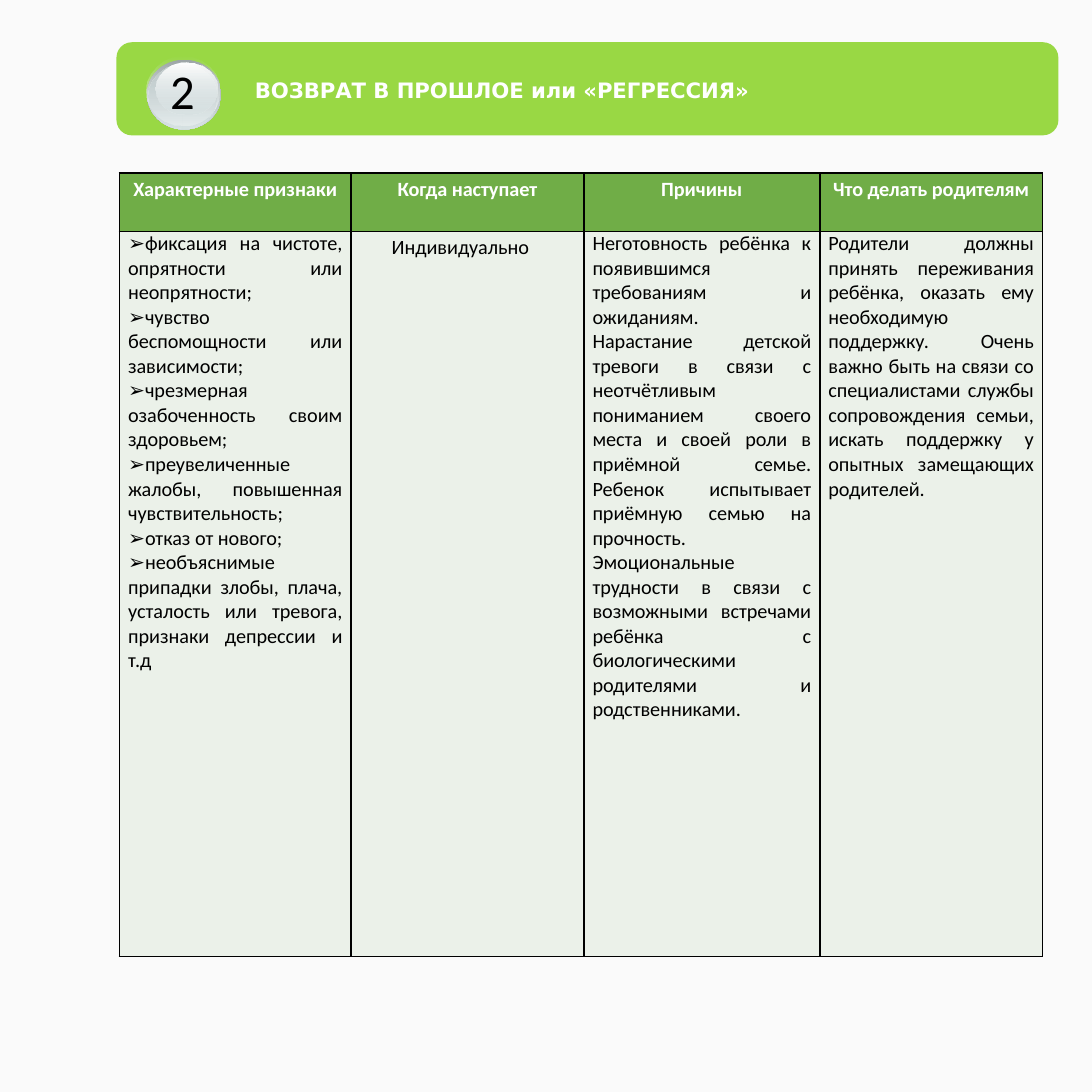
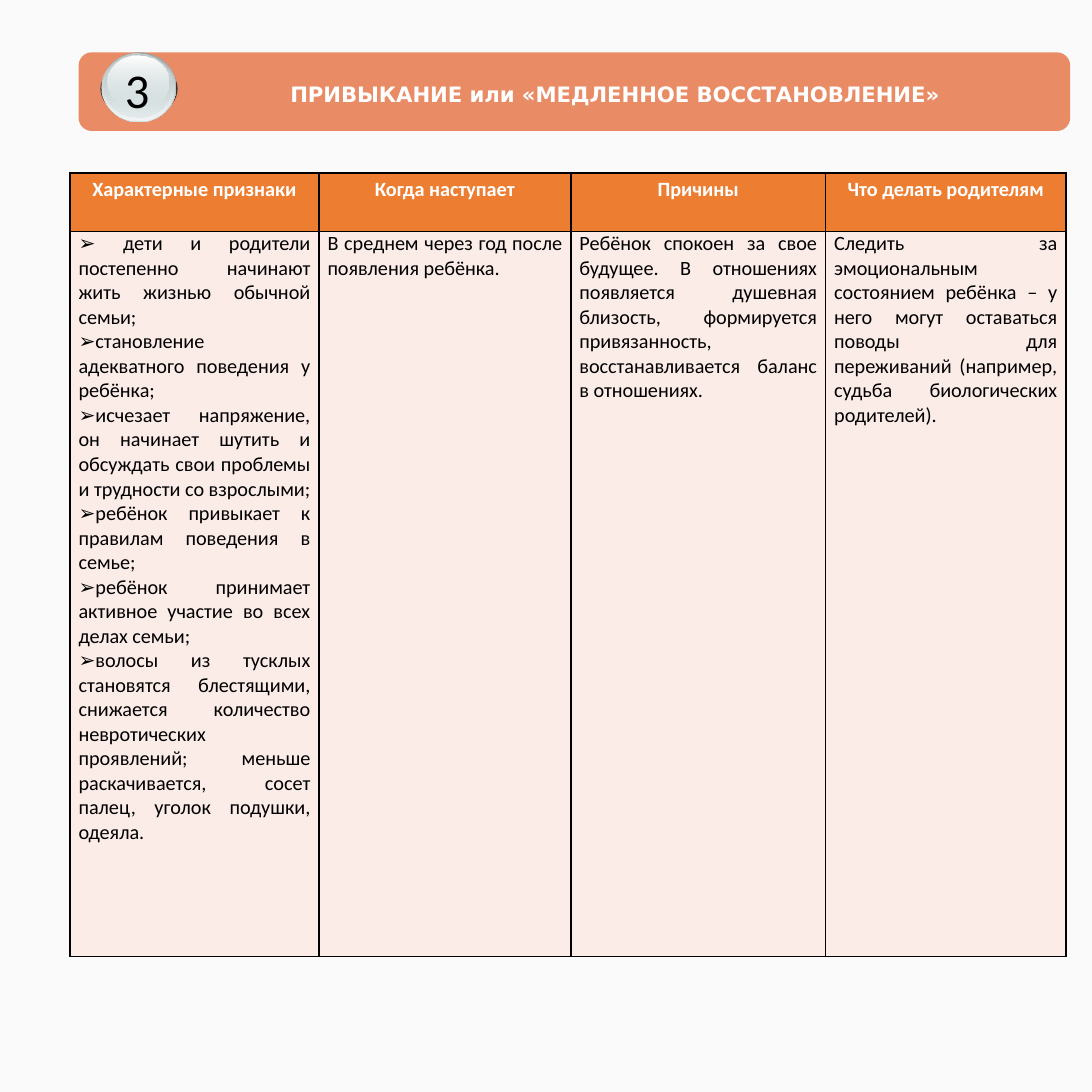
import pptx
import pptx.util
import pptx.dml.color
import pptx.enum.shapes
import pptx.enum.text
from lxml import etree
from pptx.oxml.ns import qn

Inches, Pt = pptx.util.Inches, pptx.util.Pt
SHAPE = pptx.enum.shapes.MSO_SHAPE
ALIGN = pptx.enum.text.PP_ALIGN

# Shared style
HEX = {"back": "FAFAFA", "black": "000000", "white": "FFFFFF", "shade": "333333",
       "steel": "99A1A2", "mist": "D6E1E2", "pale": "F2F5F5", "ash": "C1CBCC",
       "lime": "99D844", "green": "70AD47", "mint": "EBF1E9",
       "coral": "E98B65", "orange": "ED7D31", "blush": "FCECE8"}
SANS, HEAVY = "Calibri", "DejaVu Sans"
HEADS = ["Характерные признаки", "Когда наступает", "Причины", "Что делать родителям"]
ROWS = [0.4, 4.98]
TOP = 1.19

# Layers of the ball: size, then (colour, opacity) at the top and at the bottom
BALL = {
    "shade": ((0.53, 0.4), ("shade", 100), ("shade", 100)),
    "rim": ((0.51, 0.48), ("steel", 100), ("mist", 100)),
    "glow": ((0.5, 0.47), ("mist", 0), ("pale", 100)),
    "core": ((0.47, 0.44), ("ash", 100), ("mist", 48)),
    "shine": ((0.42, 0.36), ("white", 100), ("mist", 38)),
}

# Content
PAGES = [
    {
        "num": "2", "title": "ВОЗВРАТ В ПРОШЛОЕ или «РЕГРЕССИЯ»",
        "align": ALIGN.LEFT, "tone": ("lime", "green", "mint"),
        "band": (0.8, 0.29, 6.47, 0.64), "head": (1.65, 0.48), "digit": (1.07, 0.37),
        "ball": {"rim": (1.01, 0.41), "glow": (1.01, 0.39),
                 "core": (1.02, 0.44), "shine": (1.07, 0.43)},
        "left": 0.82, "cols": [1.59, 1.6, 1.62, 1.53],
        "signs": [
            "фиксация на чистоте, опрятности или неопрятности;",
            "чувство беспомощности или зависимости;",
            "чрезмерная озабоченность своим здоровьем;",
            "преувеличенные жалобы, повышенная чувствительность;",
            "отказ от нового;",
            "необъяснимые припадки злобы, плача, усталость или тревога, "
            "признаки депрессии и т.д",
        ],
        "when": ["Индивидуально"], "form": {"indent": 0.22, "space": 1.15},
        "why": [
            "Неготовность ребёнка к появившимся требованиям и ожиданиям.",
            "Нарастание детской тревоги в связи с неотчётливым пониманием своего "
            "места и своей роли в приёмной семье. Ребенок испытывает приёмную "
            "семью на прочность.",
            "Эмоциональные трудности в связи с возможными встречами ребёнка с "
            "биологическими родителями и родственниками.",
        ],
        "help": [
            "Родители должны принять переживания ребёнка, оказать ему необходимую "
            "поддержку. Очень важно быть на связи со специалистами службы "
            "сопровождения семьи, искать поддержку у опытных замещающих родителей.",
        ],
    },
    {
        "num": "3", "title": "ПРИВЫКАНИЕ или «МЕДЛЕННОЕ ВОССТАНОВЛЕНИЕ»",
        "align": ALIGN.CENTER, "tone": ("coral", "orange", "blush"),
        "band": (0.54, 0.36, 6.81, 0.54), "head": (1.57, 0.51), "digit": (0.76, 0.36),
        "ball": {"shade": (0.69, 0.41), "rim": (0.7, 0.36), "glow": (0.7, 0.36),
                 "core": (0.71, 0.37), "shine": (0.74, 0.38)},
        "left": 0.48, "cols": [1.71, 1.73, 1.75, 1.65],
        "signs": [
            " дети и родители постепенно начинают жить жизнью обычной семьи;",
            "становление адекватного поведения у ребёнка;",
            "исчезает напряжение, он начинает шутить и обсуждать свои проблемы и "
            "трудности со взрослыми;",
            "ребёнок привыкает к правилам поведения в семье;",
            "ребёнок принимает активное участие во всех делах семьи;",
            "волосы из тусклых становятся блестящими, снижается количество "
            "невротических проявлений; меньше раскачивается, сосет палец, уголок "
            "подушки, одеяла.",
        ],
        "when": ["В среднем через год после появления ребёнка."], "form": {},
        "why": [
            "Ребёнок спокоен за свое будущее. В отношениях появляется душевная "
            "близость, формируется привязанность, восстанавливается баланс в "
            "отношениях.",
        ],
        "help": [
            "Следить за эмоциональным состоянием ребёнка – у него могут оставаться "
            "поводы для переживаний (например, судьба биологических родителей).",
        ],
    },
]


def rgb(name):
    return pptx.dml.color.RGBColor.from_string(HEX[name])


def put(frame, lines, size=10, font=SANS, color="black", bold=False,
        align=ALIGN.JUSTIFY, space=1.0, indent=0, mark=None):
    """Fill a text frame with paragraphs of one format."""
    for i, line in enumerate(lines):
        para = frame.add_paragraph() if i else frame.paragraphs[0]
        para.text = line
        para.alignment = align
        para.line_spacing = space
        props = para._p.get_or_add_pPr()
        props.set("marL", "0")
        props.set("indent", str(Inches(indent)))
        if mark:
            etree.SubElement(props, qn("a:buFont")).set("typeface", "Arial")
            etree.SubElement(props, qn("a:buChar")).set("char", mark)
        para.font.size = Pt(size)
        para.font.name = font
        para.font.bold = bold
        para.font.color.rgb = rgb(color)


def draw(shapes, kind, box, ends):
    """Add an unlined shape, shaded from the first end down to the last."""
    shape = shapes.add_shape(kind, *map(Inches, box))
    shape.shadow.inherit = False
    shape.line.fill.background()
    if ends[0] == ends[-1]:
        shape.fill.solid()
        shape.fill.fore_color.rgb = rgb(ends[0][0])
        return
    shape.fill.gradient()
    shape.fill.gradient_angle = 270
    for stop, (name, alpha) in zip(shape.fill.gradient_stops, ends):
        stop.color.rgb = rgb(name)
        if alpha < 100:
            node = stop._gs.find(qn("a:srgbClr"))
            etree.SubElement(node, qn("a:alpha")).set("val", str(alpha * 1000))


def style(cell, fill):
    """Set margins, thin black borders and fill of a cell."""
    cell.margin_left = cell.margin_right = Inches(0.06)
    cell.margin_top = cell.margin_bottom = 0
    props = cell._tc.get_or_add_tcPr()
    for side in "LRTB":
        line = etree.SubElement(props, qn("a:ln" + side), w=str(Pt(1)))
        paint = etree.SubElement(line, qn("a:solidFill"))
        etree.SubElement(paint, qn("a:srgbClr")).set("val", HEX["black"])
    cell.fill.solid()
    cell.fill.fore_color.rgb = rgb(fill)


def banner(slide, page):
    """Coloured band with the numbered ball and the title."""
    draw(slide.shapes, SHAPE.ROUNDED_RECTANGLE, page["band"], [(page["tone"][0], 100)])
    ball = slide.shapes.add_group_shape()
    for part, spot in page["ball"].items():
        size, *ends = BALL[part]
        draw(ball.shapes, SHAPE.OVAL, spot + size, ends)

    digit = slide.shapes.add_textbox(*map(Inches, page["digit"] + (0.37, 0.36)))
    digit.text_frame.word_wrap = False
    put(digit.text_frame, [page["num"]], size=24, align=ALIGN.LEFT)

    title = slide.shapes.title
    title.left, title.top, title.width, title.height = map(
        Inches, page["head"] + (5.31, 0.28))
    frame = title.text_frame
    frame.word_wrap = True
    frame.auto_size = pptx.enum.text.MSO_AUTO_SIZE.NONE
    frame.vertical_anchor = pptx.enum.text.MSO_ANCHOR.TOP
    put(frame, [page["title"]], size=10.5, font=HEAVY, color="white", bold=True,
        align=page["align"])
    slide.shapes._spTree.append(title._element)  # bring above the band


def grid(slide, page):
    """Table with one header row and one body row."""
    cols = page["cols"]
    table = slide.shapes.add_table(
        len(ROWS), len(cols), Inches(page["left"]), Inches(TOP),
        Inches(sum(cols)), Inches(sum(ROWS))).table
    table.horz_banding = False
    for row, high in zip(table.rows, ROWS):
        row.height = Inches(high)
    body = [(page["signs"], {"mark": "➢"}), (page["when"], page["form"]),
            (page["why"], {}), (page["help"], {})]
    for i, (wide, head, (lines, form)) in enumerate(zip(cols, HEADS, body)):
        table.columns[i].width = Inches(wide)
        top, low = table.cell(0, i), table.cell(1, i)
        style(top, page["tone"][1])
        put(top.text_frame, [head], color="white", bold=True,
            align=ALIGN.CENTER, space=1.15)
        style(low, page["tone"][2])
        put(low.text_frame, lines, **form)


def main():
    deck = pptx.Presentation()
    deck.slide_width = deck.slide_height = Inches(7.5)
    back = deck.slide_master.background.fill
    back.solid()
    back.fore_color.rgb = rgb("back")
    for page in PAGES:
        slide = deck.slides.add_slide(deck.slide_layouts[5])
        banner(slide, page)
        grid(slide, page)
    deck.save("out.pptx")


if __name__ == "__main__":
    main()
